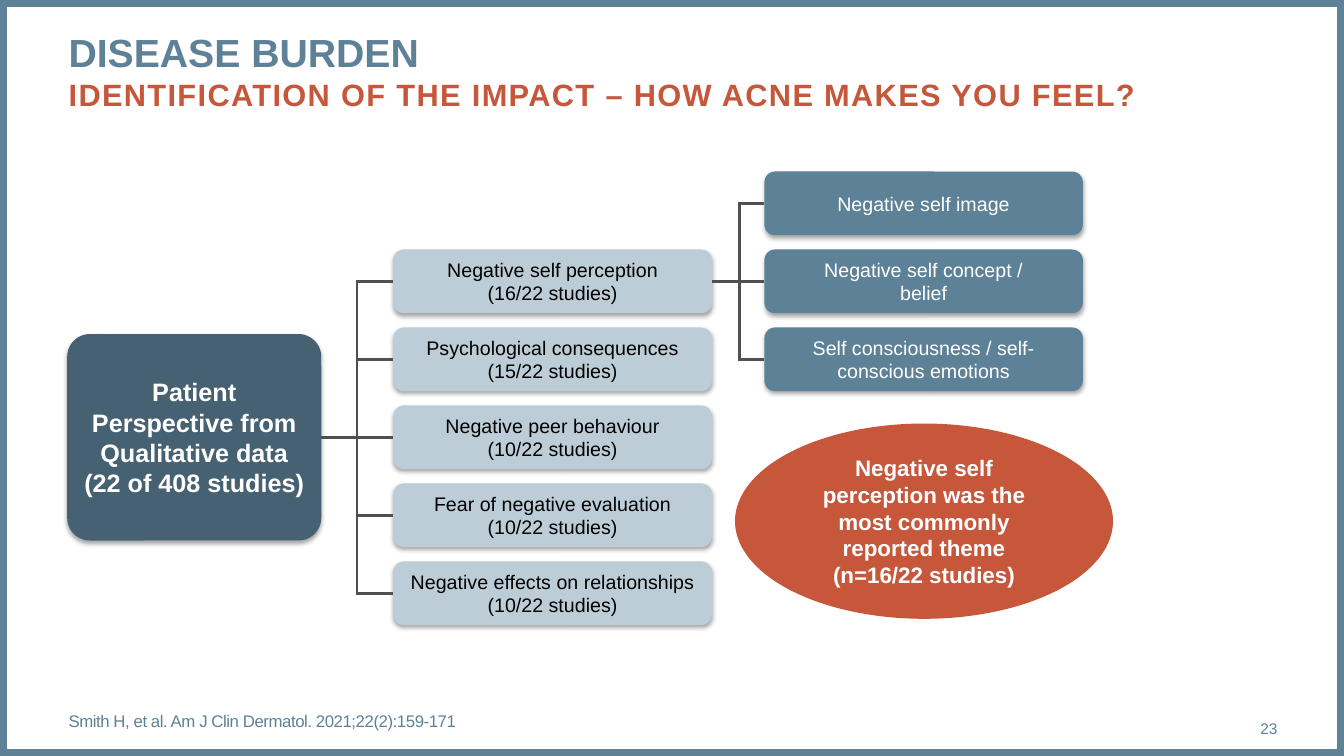
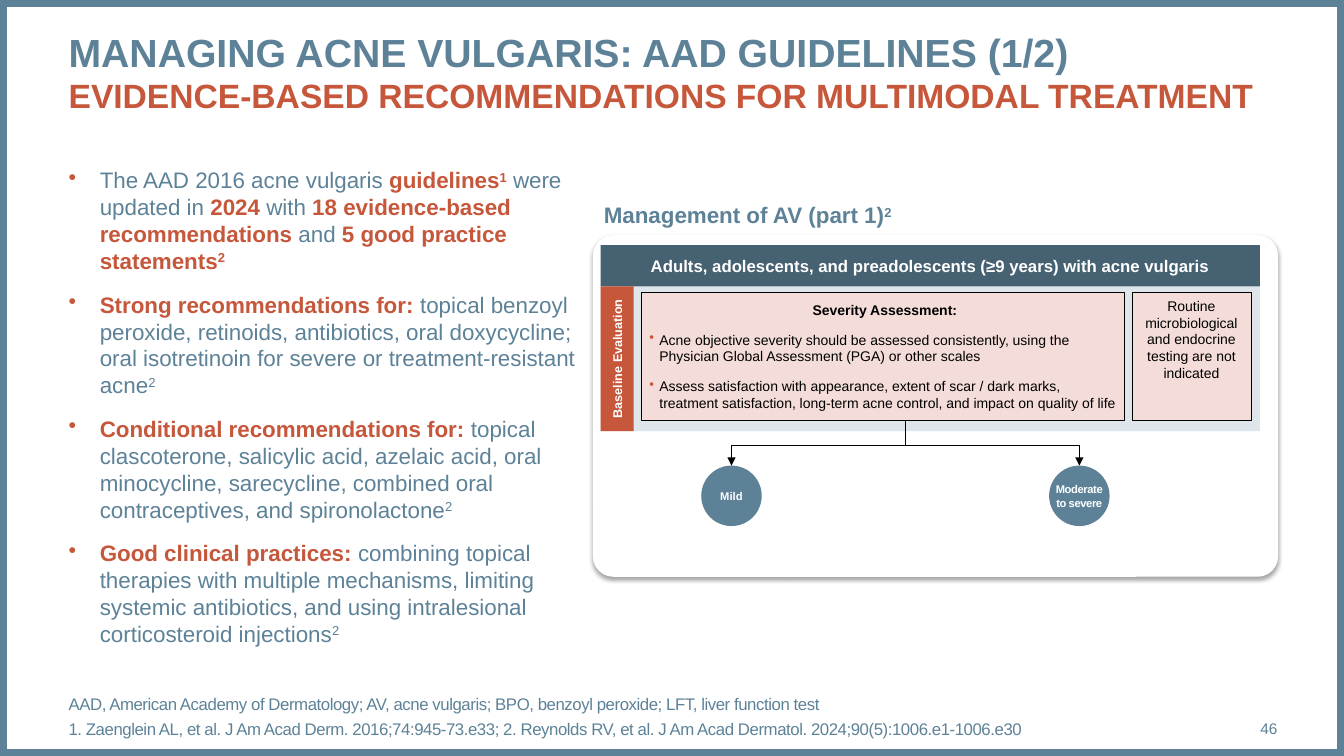
from lxml.etree import SubElement
from pptx import Presentation
from pptx.dml.color import RGBColor
from pptx.enum.shapes import MSO_CONNECTOR, MSO_SHAPE
from pptx.enum.text import MSO_ANCHOR, PP_ALIGN
from pptx.oxml.ns import qn
from pptx.util import Pt

COLORS = {
    "blue": "5D8298", "navy": "466172", "pale": "BDCDD7", "mist": "DEE6EB",
    "rust": "C6573B", "blush": "F4DDD8", "gray": "505050",
    "white": "FFFFFF", "black": "000000",
}
FONT = "Arial"
WIDTH, HEIGHT = 960, 540
MARGIN = 49
NO_INSETS = (0, 0, 0, 0)

BURDEN = {
    "title": "DISEASE BURDEN",
    "subtitle": "IDENTIFICATION OF THE IMPACT – HOW ACNE MAKES YOU FEEL?",
    "subtitle_size": 22, "subtitle_tracking": 1,
    "page": "23", "notes_top": 500.5,
    "notes": ["Smith H, et al. Am J Clin Dermatol. 2021;22(2):159-171"],
}
PERSPECTIVE = ["Patient", "Perspective from", "Qualitative data", "(22 of 408 studies)"]
THEMES = [
    ("Negative self perception", 16),
    ("Psychological consequences", 15),
    ("Negative peer behaviour", 10),
    ("Fear of negative evaluation", 10),
    ("Negative effects on relationships", 10),
]
SELF_PERCEPTION = [
    ["Negative self image"],
    ["Negative self concept /", "belief"],
    ["Self consciousness / self-conscious emotions"],
]
KEY_FINDING = "Negative self perception was the most commonly reported theme (n=16/22 studies)"

GUIDELINES = {
    "title": "MANAGING ACNE VULGARIS: AAD GUIDELINES (1/2)",
    "subtitle": "EVIDENCE-BASED RECOMMENDATIONS FOR MULTIMODAL TREATMENT",
    "subtitle_size": 24, "subtitle_tracking": 0,
    "page": "46", "notes_top": 497,
    "notes": [
        "AAD, American Academy of Dermatology; AV, acne vulgaris; BPO, benzoyl peroxide; LFT, liver function test",
        "1. Zaenglein AL, et al. J Am Acad Derm. 2016;74:945-73.e33; 2. Reynolds RV, et al. J Am Acad Dermatol. 2024;90(5):1006.e1-1006.e30",
    ],
}
RECOMMENDATIONS = [
    [("The AAD 2016 acne vulgaris ", ""), ("guidelines", "k"), ("1", "k^"),
     (" were updated in ", ""), ("2024", "k"), (" with ", ""),
     ("18 evidence-based recommendations", "k"), (" and ", ""),
     ("5 good practice statements", "k"), ("2", "k^")],
    [("Strong recommendations for: ", "k"),
     ("topical benzoyl peroxide, retinoids, antibiotics, oral doxycycline; oral isotretinoin for severe or treatment-resistant acne", ""),
     ("2", "^")],
    [("Conditional recommendations for: ", "k"),
     ("topical clascoterone, salicylic acid, azelaic acid, oral minocycline, sarecycline, combined oral contraceptives, and spironolactone", ""),
     ("2", "^")],
    [("Good clinical practices: ", "k"),
     ("combining topical therapies with multiple mechanisms, limiting systemic antibiotics, and using intralesional corticosteroid injections", ""),
     ("2", "^")],
]
CAPTION = [("Management of AV (part 1)", ""), ("2", "^")]
POPULATION = "Adults, adolescents, and preadolescents (≥9 years) with acne vulgaris"
STAGE = "Baseline Evaluation"
SEVERITY = [
    [("Severity Assessment:", "b")],
    "Acne objective severity should be assessed consistently, using the Physician Global Assessment (PGA) or other scales",
    "Assess satisfaction with appearance, extent of scar / dark marks, treatment satisfaction, long-term acne control, and impact on quality of life",
]
TESTING = "Routine microbiological and endocrine testing are not indicated"
GRADES = [(["Mild"], 522.5, 0), (["Moderate", "to severe"], 771, -0.3)]


def rgb(name):
    return RGBColor.from_string(COLORS[name])


def write(shape, paragraphs, size, color, bold=False, align=PP_ALIGN.CENTER,
          anchor=MSO_ANCHOR.MIDDLE, insets=(7.2, 3.6, 7.2, 3.6), wrap=True,
          gap=0, tracking=0):
    frame = shape.text_frame
    frame.word_wrap = wrap
    frame.vertical_anchor = anchor
    frame.margin_left, frame.margin_top, frame.margin_right, frame.margin_bottom = map(Pt, insets)
    for index, runs in enumerate(paragraphs):
        paragraph = frame.add_paragraph() if index else frame.paragraphs[0]
        paragraph.alignment = align
        if index and gap:
            paragraph.space_before = Pt(gap)
        for text, marks in [(runs, "")] if isinstance(runs, str) else runs:
            run = paragraph.add_run()
            run.text = text
            run.font.name = FONT
            run.font.size = Pt(size)
            run.font.bold = bold or "k" in marks or "b" in marks
            run.font.color.rgb = rgb("rust" if "k" in marks else color)
            if "^" in marks:
                run.font._element.set("baseline", "30000")
            if tracking:
                run.font._element.set("spc", str(round(tracking * 100)))
    return frame


def add_bullet(paragraph, indent):
    paragraph.alignment = PP_ALIGN.LEFT
    properties = paragraph._p.get_or_add_pPr()
    properties.set("marL", str(Pt(indent)))
    properties.set("indent", str(-Pt(indent)))
    SubElement(SubElement(properties, qn("a:buClr")), qn("a:srgbClr"), val=COLORS["rust"])
    SubElement(properties, qn("a:buChar"), char="•")


def add_text(slide, box, paragraphs, size, color, **options):
    return write(slide.shapes.add_textbox(*map(Pt, box)), paragraphs, size, color,
                 insets=NO_INSETS, **options)


def add_block(slide, preset, box, fill=None, line=None, line_width=0.5, raised=False):
    block = slide.shapes.add_shape(preset, *map(Pt, box))
    block.shadow.inherit = False
    if fill:
        block.fill.solid()
        block.fill.fore_color.rgb = rgb(fill)
    else:
        block.fill.background()
    if line:
        block.line.color.rgb = rgb(line)
        block.line.width = Pt(line_width)
    else:
        block.line.fill.background()
    if raised:
        shadow = SubElement(block._element.spPr.find(qn("a:effectLst")), qn("a:outerShdw"),
                            blurRad=str(Pt(3.1)), dist=str(Pt(1.8)), dir="5400000",
                            algn="t", rotWithShape="0")
        shade = SubElement(shadow, qn("a:srgbClr"), val=COLORS["black"])
        SubElement(shade, qn("a:alpha"), val="35000")
    return block


def add_line(slide, start, end, color, width, source=None, target=None, arrow=False):
    line = slide.shapes.add_connector(MSO_CONNECTOR.STRAIGHT, *map(Pt, (*start, *end)))
    line.line.color.rgb = rgb(color)
    line.line.width = Pt(width)
    SubElement(line._element.spPr, qn("a:effectLst"))
    if source:
        line.begin_connect(*source)
    if target:
        line.end_connect(*target)
    if arrow:
        SubElement(line.line._get_or_add_ln(), qn("a:tailEnd"), type="triangle")


def start_slide(deck, content):
    slide = deck.slides.add_slide(deck.slide_layouts[6])
    add_block(slide, MSO_SHAPE.RECTANGLE, (0, 0, WIDTH, HEIGHT), line="blue", line_width=10)
    heading = add_text(slide, (MARGIN, 20.2, 890, 67.5), [content["title"], content["subtitle"]],
                       28, "blue", bold=True, align=PP_ALIGN.LEFT, anchor=MSO_ANCHOR.TOP)
    subtitle = heading.paragraphs[1].runs[0].font
    subtitle.size = Pt(content["subtitle_size"])
    subtitle.color.rgb = rgb("rust")
    subtitle._element.set("spc", str(content["subtitle_tracking"] * 100))
    add_text(slide, (850.5, 506, 62, 29), [content["page"]], 11, "blue", align=PP_ALIGN.RIGHT)
    add_text(slide, (MARGIN, content["notes_top"], 801, 29), content["notes"], 12, "blue",
             align=PP_ALIGN.LEFT, gap=3, tracking=-0.3)
    return slide


def build_burden(deck):
    slide = start_slide(deck, BURDEN)
    first_top, pitch = 122.5, 55.7
    box_width, box_height = 227.5, 45.5
    root_left, root_width, root_height = 48, 181.5, 147.5
    theme_left, facet_left = 281, 546
    theme_trunk, facet_trunk = 255, 528.5

    def middle(row):
        return first_top + row * pitch + box_height / 2

    def add_node(left, row, lines, fill, color):
        node = add_block(slide, MSO_SHAPE.ROUNDED_RECTANGLE,
                         (left, first_top + row * pitch, box_width, box_height), fill, raised=True)
        write(node, lines, 14, color)
        return node

    def add_branches(trunk, source, nodes, first_row, hub_row):
        last_row = first_row + len(nodes) - 1
        add_line(slide, (trunk, middle(first_row) - 1), (trunk, middle(last_row) + 1), "gray", 2)
        for row, node in enumerate(nodes, first_row):
            add_line(slide, (trunk, middle(row)), (trunk, middle(row)), "gray", 2,
                     source=(source, 3) if row == hub_row else None, target=(node, 1))

    root = add_block(slide, MSO_SHAPE.ROUNDED_RECTANGLE,
                     (root_left, middle(3) - root_height / 2, root_width, root_height),
                     "navy", raised=True)
    root.adjustments[0] = 0.11
    write(root, PERSPECTIVE, 18, "white", bold=True)
    themes = [add_node(theme_left, row, [theme, f"({count}/22 studies)"], "pale", "black")
              for row, (theme, count) in enumerate(THEMES, 1)]
    facets = [add_node(facet_left, row, lines, "blue", "white")
              for row, lines in enumerate(SELF_PERCEPTION)]
    add_branches(theme_trunk, root, themes, 1, 3)
    add_branches(facet_trunk, themes[0], facets, 0, 1)

    finding = add_block(slide, MSO_SHAPE.OVAL, (525, 302.5, 270, 139.5), "rust")
    write(finding, [KEY_FINDING], 16, "white", bold=True)


def build_guidelines(deck):
    slide = start_slide(deck, GUIDELINES)
    advice = add_text(slide, (MARGIN, 119, 380, 355), RECOMMENDATIONS, 16, "blue",
                      align=PP_ALIGN.LEFT, anchor=MSO_ANCHOR.TOP, gap=12)
    for paragraph in advice.paragraphs:
        add_bullet(paragraph, 22.3)

    panel = add_block(slide, MSO_SHAPE.ROUNDED_RECTANGLE, (423.5, 168, 489.5, 244),
                      "white", raised=True)
    panel.adjustments[0] = 0.06
    caption = add_text(slide, (431.3, 147.6, 212, 16), [CAPTION], 16, "blue", bold=True,
                       align=PP_ALIGN.LEFT, anchor=MSO_ANCHOR.TOP, wrap=False)
    caption.paragraphs[0].line_spacing = 0.8

    left, width = 429, 471
    header_top, header_height = 175, 29.5
    band_top, band_height = header_top + header_height, 103.5
    stage_width = 23.7
    card_top, card_height = 208.8, 91.5
    rectangle = MSO_SHAPE.RECTANGLE

    add_block(slide, rectangle, (left, band_top, width, band_height), "mist")
    header = add_block(slide, rectangle, (left, header_top, width, header_height), "navy")
    write(header, [POPULATION], 12, "white", bold=True)
    stage = add_block(slide, rectangle,
                      (left + (stage_width - band_height) / 2,
                       band_top + (band_height - stage_width) / 2, band_height, stage_width), "rust")
    stage.rotation = 270
    write(stage, [STAGE], 9, "white", bold=True, insets=(0, 3.6, 0, 3.6))

    testing = add_block(slide, rectangle, (808.5, card_top, 85, card_height), "blush", "black")
    write(testing, [TESTING], 10, "black", anchor=MSO_ANCHOR.TOP)
    severity = add_block(slide, rectangle, (458, card_top, 345, card_height), "blush", "black")
    criteria = write(severity, SEVERITY, 10, "black", insets=(5.8, 3.6, 2.9, 3.6), gap=9)
    for paragraph in criteria.paragraphs[1:]:
        add_bullet(paragraph, 7.2)

    diameter, grade_top, fork_y = 43.2, 332.6, 318.2
    centers = [center for _, center, _ in GRADES]
    fork_x = sum(centers) / len(centers)
    add_line(slide, (fork_x, card_top + card_height), (fork_x, fork_y), "black", 1.25)
    add_line(slide, (centers[0], fork_y), (centers[-1], fork_y), "black", 1.25)
    for lines, center, tracking in GRADES:
        grade = add_block(slide, MSO_SHAPE.OVAL,
                          (center - diameter / 2, grade_top, diameter, diameter), "blue")
        write(grade, lines, 8, "white", bold=True, insets=NO_INSETS, wrap=False, tracking=tracking)
        add_line(slide, (center, fork_y), (center, grade_top), "black", 1.25,
                 target=(grade, 0), arrow=True)


def main():
    deck = Presentation()
    deck.slide_width, deck.slide_height = Pt(WIDTH), Pt(HEIGHT)
    build_burden(deck)
    build_guidelines(deck)
    deck.save("out.pptx")


if __name__ == "__main__":
    main()
